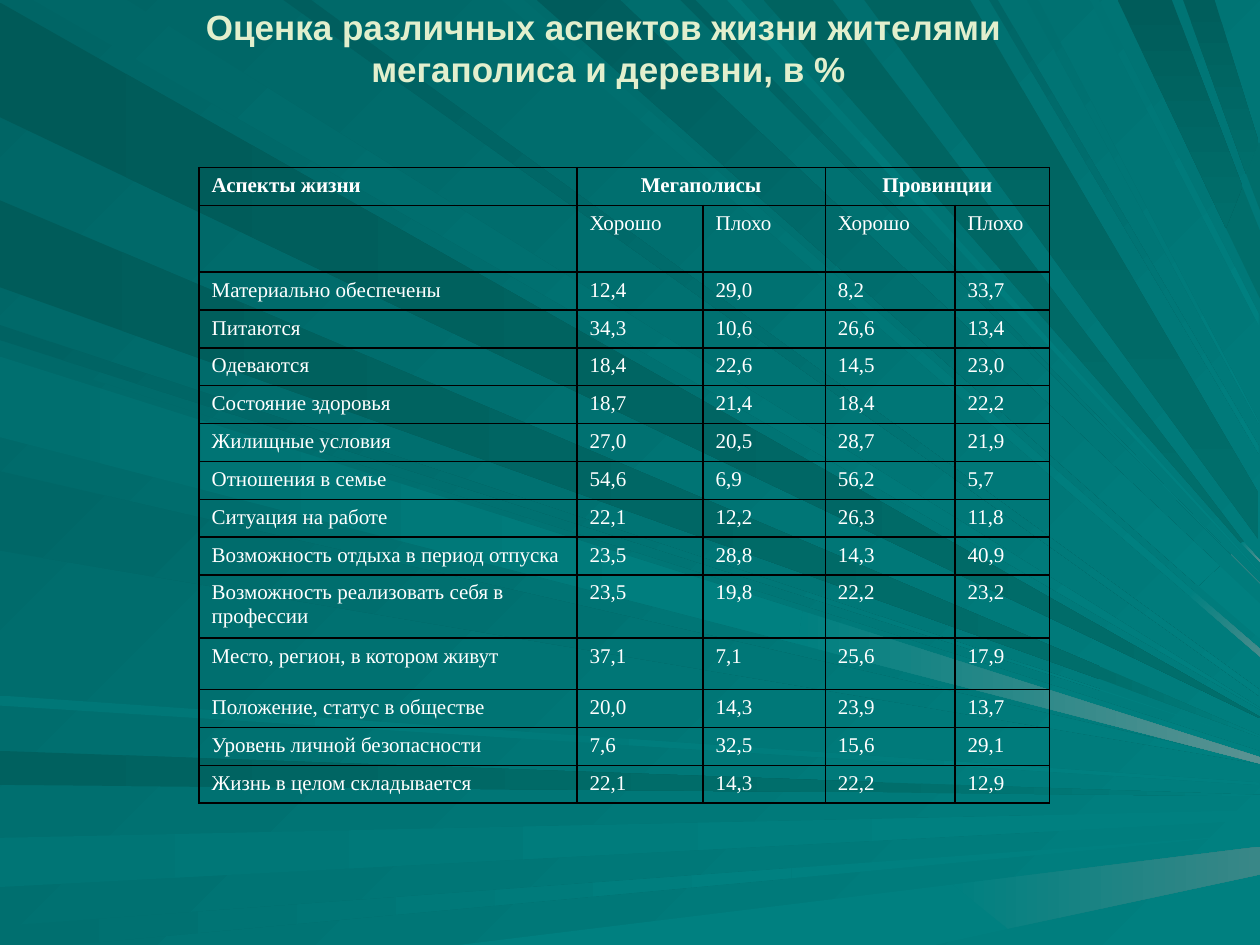
"""Slide with a table comparing how city and village people rate their lives."""
from lxml.etree import SubElement
from pptx import Presentation
from pptx.dml.color import RGBColor
from pptx.enum.text import MSO_ANCHOR, PP_ALIGN
from pptx.oxml.ns import qn
from pptx.util import Inches, Pt

WHITE = RGBColor(0xFF, 0xFF, 0xFF)
CREAM = RGBColor(0xE2, 0xEF, 0xCD)
DARK_TEAL = RGBColor(0x00, 0x65, 0x65)
TEAL = RGBColor(0x00, 0x80, 0x80)
BORDER = "000000"

deck = Presentation()
deck.slide_width, deck.slide_height = Inches(10), Inches(7.5)
UNIT = deck.slide_width // 1000
slide = deck.slides.add_slide(deck.slide_layouts[6])


def paint_gradient(fill, start, end, angle):
    fill.gradient()
    fill.gradient_angle = (360 - angle) % 360
    for stop, color in zip(fill.gradient_stops, (start, end)):
        stop.color.rgb = color


paint_gradient(slide.background.fill, DARK_TEAL, TEAL, 45)

rays = [
    ("005A58", "006E6B", 0, "556,317 0,2 0,93 529,345 1000,570 1000,569"),
    ("006767", "008080", 45, "577,298 101,0 26,0 563,310 1000,563 1000,562"),
    ("00615F", "006E6B", 0, "0,623 701,629 701,621 0,596"),
    ("006E6B", "008080", 0, "1000,632 1000,631 701,621 701,629"),
    ("007575", "008080", 0, "0,704 831,660 831,647 0,665"),
    ("008080", "008080", 0, "1000,651 1000,643 831,647 831,660"),
    ("008080", "008080", 0, "1000,662 628,689 628,697"),
    ("006F6F", "008080", 0, "0,750 54,750 628,697 628,689 0,735"),
    ("008080", "008080", 0, "742,750 801,737 756,702 364,750"),
    ("008080", "398787", 0, "1000,694 1000,672 756,702 800,737"),
    ("008080", "008080", 0, "1000,589 873,547 873,548"),
    ("006262", "008080", 45, "0,270 873,548 873,547 0,258"),
    ("006E6B", "008080", 0, "1000,585 1000,584 873,529 873,539"),
    ("005C5A", "006E6B", 0, "0,228 873,539 873,529 0,159"),
    ("006D6D", "008080", 45, "398,0 944,473 947,469 416,0"),
    ("008080", "4A8C8C", 45, "1000,521 1000,515 947,469 944,473"),
    ("008080", "008080", 0, "1000,507 1000,479 968,449 951,465"),
    ("005C5C", "008080", 45, "426,0 951,465 968,449 492,0"),
    ("FF9999", "FF9999", 0, "1000,463 977,440 977,440"),
    ("006060", "008080", 45, "540,0 977,440 977,440 552,0"),
    ("006360", "006E6B", 90, "606,0 985,431 987,430 661,0"),
    ("008080", "5A9292", 45, "1000,446 1000,445 987,430 985,431"),
    ("006E6B", "006E6B", 0, "1000,237 1000,183 986,148 973,181"),
    ("005C5A", "006E6B", 90, "887,0 973,181 986,148 930,0"),
    ("005E5C", "006E6B", 90, "964,0 939,0 989,138 999,113"),
    ("006E6B", "006E6B", 0, "989,138 1000,167 1000,114 999,113"),
    ("006969", "008080", 45, "0,342 999,602 999,596 0,278"),
    ("006767", "008080", 45, "0,437 999,606 999,605 0,374"),
    ("007777", "008080", 0, "0,560 999,623 999,621 0,552"),
    ("005E5E", "008080", 45, "225,0 999,552 999,547 247,0"),
    ("007777", "008080", 45, "577,0 999,454 999,453 588,0"),
    ("006360", "006E6B", 90, "770,0 686,0 999,428 999,390 998,390"),
    ("006565", "008080", 45, "785,0 999,360 999,354 792,0"),
    ("006F6F", "008080", 45, "815,0 999,336 999,335 824,0"),
    ("007373", "008080", 45, "999,249 872,0 865,0 999,258"),
    ("006F6F", "008080", 0, "0,283 0,347 633,511 635,498 637,485"),
    ("008080", "5A9292", 0, "1000,601 637,485 635,498 633,511 1000,606"),
]
for start, end, angle, outline in rays:
    corners = [tuple(map(int, pair.split(","))) for pair in outline.split()]
    builder = slide.shapes.build_freeform(*corners[0], scale=UNIT)
    builder.add_line_segments(corners[1:], close=True)
    ray = builder.convert_to_shape()
    ray.shadow.inherit = False
    ray.line.fill.background()
    if start == end:
        ray.fill.solid()
        ray.fill.fore_color.rgb = RGBColor.from_string(start)
    else:
        paint_gradient(ray.fill, RGBColor.from_string(start), RGBColor.from_string(end), angle)

heading = slide.shapes.add_textbox(33 * UNIT, 0, 900 * UNIT, 75 * UNIT).text_frame
heading.word_wrap = True
heading.vertical_anchor = MSO_ANCHOR.MIDDLE
heading.text = "Оценка различных аспектов жизни жителями \vмегаполиса и деревни, в %"
heading.paragraphs[0].alignment = PP_ALIGN.CENTER
for run in heading.paragraphs[0].runs:
    run.font.name, run.font.size, run.font.bold = "Arial", Pt(20), True
    run.font.color.rgb = CREAM

ratings = [
    ("Аспекты жизни", "Мегаполисы", "", "Провинции", ""),
    ("", "Хорошо", "Плохо", "Хорошо", "Плохо"),
    ("Материально обеспечены", "12,4", "29,0", "8,2", "33,7"),
    ("Питаются", "34,3", "10,6", "26,6", "13,4"),
    ("Одеваются", "18,4", "22,6", "14,5", "23,0"),
    ("Состояние здоровья", "18,7", "21,4", "18,4", "22,2"),
    ("Жилищные условия", "27,0", "20,5", "28,7", "21,9"),
    ("Отношения в семье", "54,6", "6,9", "56,2", "5,7"),
    ("Ситуация на работе", "22,1", "12,2", "26,3", "11,8"),
    ("Возможность отдыха в период отпуска", "23,5", "28,8", "14,3", "40,9"),
    ("Возможность реализовать себя в профессии", "23,5", "19,8", "22,2", "23,2"),
    ("Место, регион, в котором живут", "37,1", "7,1", "25,6", "17,9"),
    ("Положение, статус в обществе", "20,0", "14,3", "23,9", "13,7"),
    ("Уровень личной безопасности", "7,6", "32,5", "15,6", "29,1"),
    ("Жизнь в целом складывается", "22,1", "14,3", "22,2", "12,9"),
]
column_widths = [300, 100, 97, 103, 75]
row_heights = [28.5] * len(ratings)
row_heights[1], row_heights[10], row_heights[11] = 53, 47, 41

table = slide.shapes.add_table(
    len(ratings), len(column_widths), 158 * UNIT, 133 * UNIT,
    sum(column_widths) * UNIT, int(sum(row_heights) * UNIT)).table
table.first_row = table.horz_banding = False
for column, width in zip(table.columns, column_widths):
    column.width = width * UNIT
for row, height in zip(table.rows, row_heights):
    row.height = int(height * UNIT)
for first in (1, 3):
    table.cell(0, first).merge(table.cell(0, first + 1))

for r, rating in enumerate(ratings):
    for c, wording in enumerate(rating):
        cell = table.cell(r, c)
        properties = cell._tc.get_or_add_tcPr()
        for side in ("a:lnL", "a:lnR", "a:lnT", "a:lnB"):
            edge = SubElement(properties, qn(side), w=str(Pt(1)))
            SubElement(SubElement(edge, qn("a:solidFill")), qn("a:srgbClr"), val=BORDER)
        cell.fill.background()
        cell.text_frame.text = wording
        paragraph = cell.text_frame.paragraphs[0]
        if r == 0 and c > 0:
            paragraph.alignment = PP_ALIGN.CENTER
        for run in paragraph.runs:
            run.font.name, run.font.size, run.font.bold = "Times New Roman", Pt(12), r == 0
            run.font.color.rgb = WHITE

deck.save("out.pptx")
